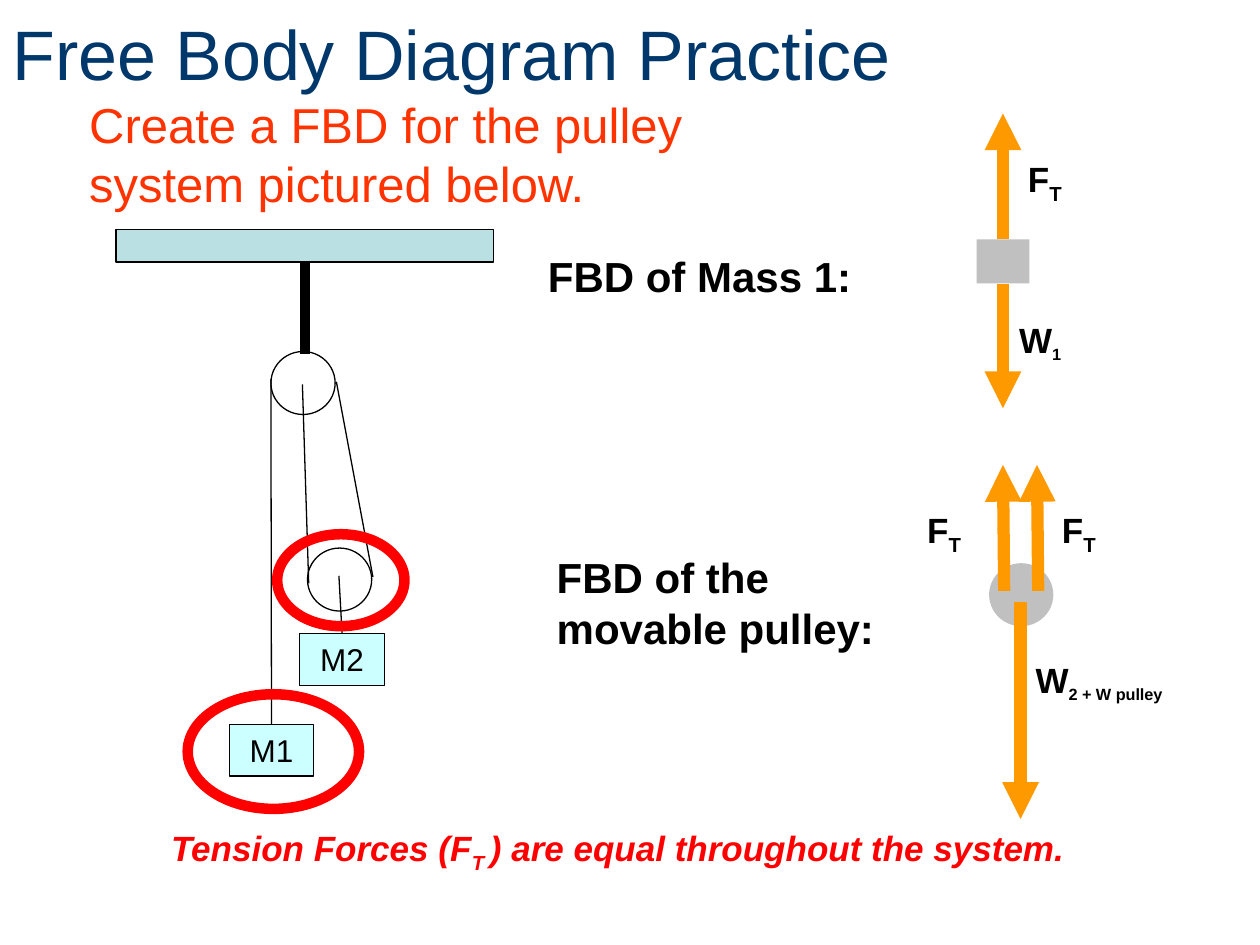
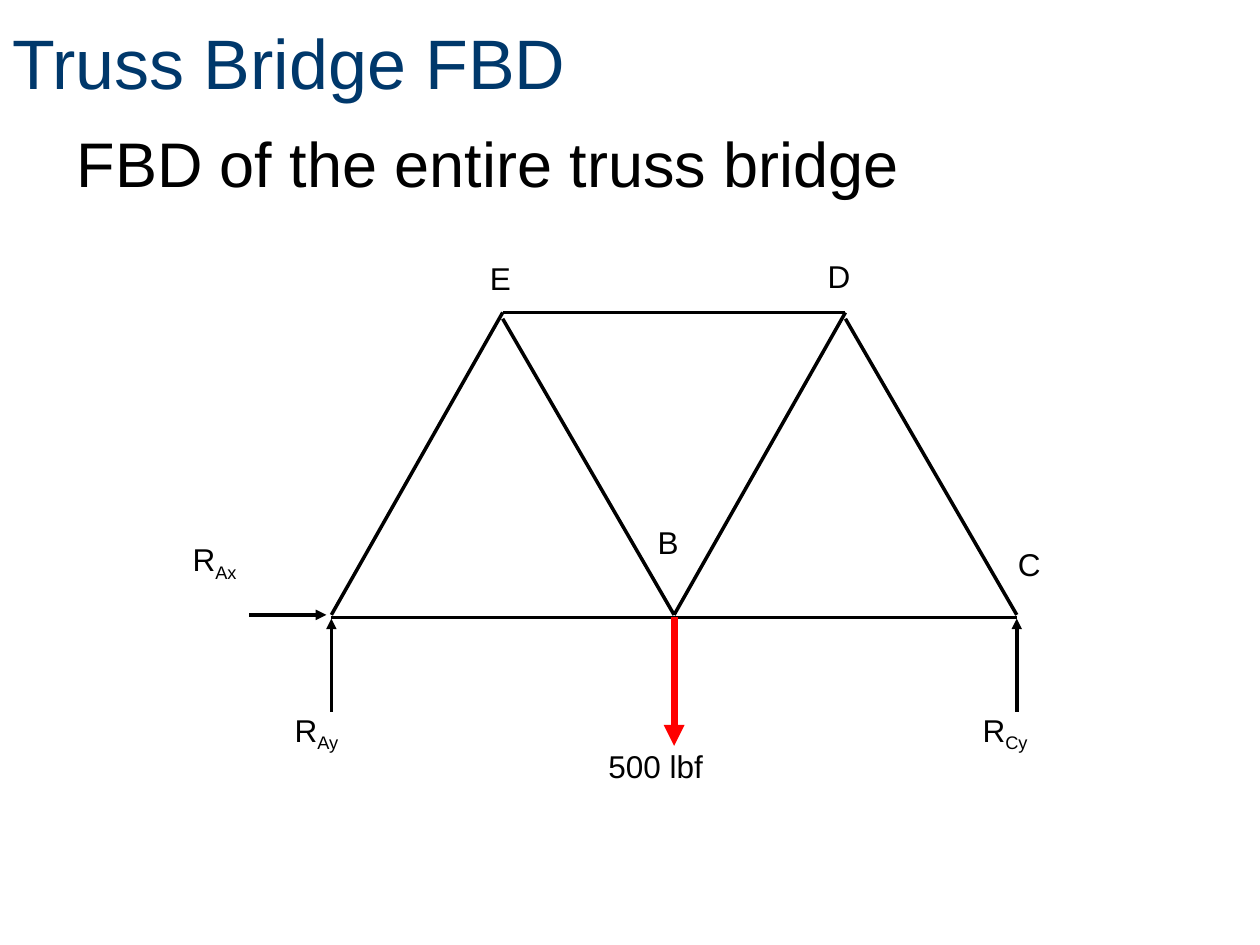
from dataclasses import dataclass

from lxml import etree
from pptx import Presentation
from pptx.dml.color import RGBColor
from pptx.enum import shapes, text
from pptx.oxml import ns
from pptx.util import Inches, Pt


@dataclass(frozen=True)
class Theme:
    font: str = "Arial"
    title: str = "00386B"
    task: str = "FF3300"
    ink: str = "000000"
    alert: str = "FF0000"
    force: str = "FF9900"
    body: str = "C0C0C0"
    ceiling: str = "BBE0E3"
    mass: str = "CCFFFF"
    title_size: int = 40
    lead_size: int = 36
    task_size: int = 28
    heading_size: int = 24
    force_size: int = 20
    weight_sub_size: int = 16
    label_size: int = 18
    hairline: float = 0.75
    member: int = 2
    load: int = 4
    heavy: int = 6
    arrow: int = 7


THEME = Theme()
WIDTH, HEIGHT = 10, 7.5

# ---- Content: pulley slide (text between bars is a subscript) ----
PULLEY_TITLE = "Free Body Diagram Practice"
TASK = ("Create a FBD for the pulley system pictured below.", (0.61, 0.7, 5.89, 1.03))
HEADINGS = [
    ("FBD of Mass 1:", (4.25, 1.94, 2.95, 0.5)),
    ("FBD of the movable pulley:", (4.32, 4.33, 3.15, 0.9)),
]
CONCLUSION = ("Tension Forces (F|T |) are equal throughout the system.", (1.26, 6.51, 8.1, 0.43))
CEILING = (0.92, 1.82, 3, 0.26)
WHEEL_SIZE = (0.51, 0.5)
WHEELS = [(2.15, 2.79), (2.44, 4.35)]
MASS_SIZE = (0.67, 0.41)
MASSES = {"M1": (1.82, 5.75), "M2": (2.38, 5.03)}
MASS_ROPES = {"M1": (2.15, 3.01), "M2": (2.69, 4.57)}
PULLEY_ROPES = [((2.4, 3.05), (2.45, 4.63)), ((2.67, 3.03), (2.96, 4.58))]
RINGS = [(1.49, 5.51, 1.36, 0.91), (2.2, 4.24, 1.01, 0.73)]
FREE_MASS = (7.75, 1.9, 0.42, 0.35)
FREE_PULLEY = (7.85, 4.47)
PULLEY_FORCES = [
    ((8.24, 4.69), (8.23, 3.69)),
    ((7.97, 4.69), (7.96, 3.69)),
    ((8.1, 4.78), (8.1, 6.5)),
]
TENSION_LABELS = [(8.06, 1.2), (8.33, 3.99), (7.26, 3.99)]
WEIGHT_LABELS = [
    ("W|1|", (7.99, 2.48, 0.83, 0.43)),
    ("W|2 + W pulley|", (8.12, 5.18, 1.62, 0.43)),
]

# ---- Content: truss slide; joints as (half panels from A, chord) ----
TRUSS_TITLE = "Truss Bridge FBD"
TRUSS_LEAD = ("FBD of the entire truss bridge", (0.51, 0.94, 6.88, 0.77))
TRUSS_LEFT, HALF_PANEL = 2.63, 1.36
CHORDS = {"top": 2.48, "bottom": 4.9}
JOINTS = {"A": (0, "bottom"), "B": (2, "bottom"), "C": (4, "bottom"),
          "D": (3, "top"), "E": (1, "top")}
# Members with the vertical gap left at each end
MEMBERS = [
    ("A", "B", 0, 0), ("B", "C", 0, 0), ("E", "D", 0, 0),
    ("A", "E", -0.02, 0), ("B", "D", -0.02, 0),
    ("E", "B", 0.05, -0.02), ("D", "C", 0.05, -0.02),
]
# Forces as (joint, offset of tail, offset of tip, colour, width)
TRUSS_FORCES = [
    ("A", (0, 0.75), (0, 0.01), THEME.ink, THEME.member),
    ("A", (-0.65, -0.02), (-0.04, -0.02), THEME.ink, THEME.member),
    ("C", (0, 0.75), (0, 0.01), THEME.ink, THEME.member),
    ("B", (0, 0), (0, 1.02), THEME.alert, THEME.load),
]
TRUSS_LABELS = [
    ("B", (5.12, 4.1, 0.51, 0.55)), ("C", (7.98, 4.28, 0.51, 0.55)),
    ("D", (6.47, 1.99, 0.51, 0.55)), ("E", (3.79, 2.01, 0.51, 0.55)),
    ("500 lbf", (4.73, 5.88, 1.34, 0.55)),
    ("R|Ax|", (1.43, 4.24, 1.04, 0.4)), ("R|Ay|", (2.24, 5.59, 1.04, 0.4)),
    ("R|Cy|", (7.7, 5.59, 1.04, 0.4)),
]


# ---- Drawing helpers ----
def inches(values):
    return [Inches(value) for value in values]


def write(box, words, size, color=THEME.ink, bold=False, italic=False, sub_size=None):
    frame = box.text_frame
    frame.word_wrap = True
    para = frame.paragraphs[0]
    for index, piece in enumerate(words.split("|")):
        if not piece:
            continue
        span = para.add_run()
        span.text = piece
        font = span.font
        font.name, font.bold, font.italic = THEME.font, bold, italic
        font.size = Pt(size)
        font.color.rgb = RGBColor.from_string(color)
        if index % 2:
            font.size = Pt(sub_size or size)
            span._r.get_or_add_rPr().set("baseline", "-25000")
    return para


def add_text(page, words, place, size, **style):
    box = page.shapes.add_textbox(*inches(place))
    write(box, words, size, **style)
    return box


def add_title(page, words, height):
    box = add_text(page, words, (0, 0, 0.93 * WIDTH, height), THEME.title_size, color=THEME.title)
    box.text_frame.vertical_anchor = text.MSO_ANCHOR.MIDDLE


def add_figure(page, kind, place, fill=None, line=None, width=THEME.hairline):
    figure = page.shapes.add_shape(kind, *inches(place))
    figure.shadow.inherit = False
    if fill:
        figure.fill.solid()
        figure.fill.fore_color.rgb = RGBColor.from_string(fill)
    else:
        figure.fill.background()
    if line:
        figure.line.color.rgb = RGBColor.from_string(line)
        figure.line.width = Pt(width)
    else:
        figure.line.fill.background()
    return figure


def add_line(page, start, end, color=THEME.ink, width=THEME.hairline, arrow=False):
    line = page.shapes.add_connector(shapes.MSO_CONNECTOR.STRAIGHT, *inches((*start, *end)))
    line.line.color.rgb = RGBColor.from_string(color)
    line.line.width = Pt(width)
    if arrow:
        outline = line.line._get_or_add_ln()
        etree.SubElement(outline, ns.qn("a:tailEnd"), type="triangle")
    etree.SubElement(line._element.spPr, ns.qn("a:effectLst"))
    return line


# ---- Slides ----
def build_pulley(page):
    oval, rectangle = shapes.MSO_SHAPE.OVAL, shapes.MSO_SHAPE.RECTANGLE
    add_figure(page, oval, FREE_PULLEY + WHEEL_SIZE, fill=THEME.body)
    add_title(page, PULLEY_TITLE, 0.84)

    # Pulley system
    ceiling = add_figure(page, rectangle, CEILING, fill=THEME.ceiling, line=THEME.ink)
    rod = add_line(page, (2.42, 2.08), (2.42, 2.81), width=THEME.heavy)
    rod.begin_connect(ceiling, 2)
    for wheel in WHEELS:
        add_figure(page, oval, wheel + WHEEL_SIZE, line=THEME.ink)
    for start, end in PULLEY_ROPES:
        add_line(page, start, end)
    for name, corner in MASSES.items():
        mass = add_figure(page, rectangle, corner + MASS_SIZE, fill=THEME.mass, line=THEME.ink)
        para = write(mass, name, THEME.label_size)
        para.alignment = text.PP_ALIGN.CENTER
        mass.text_frame.vertical_anchor = text.MSO_ANCHOR.TOP
        rope = add_line(page, MASS_ROPES[name], corner)
        rope.end_connect(mass, 0)

    # Free bodies and their forces
    free_mass = add_figure(page, rectangle, FREE_MASS, fill=THEME.body)
    middle = FREE_MASS[0] + FREE_MASS[2] / 2
    for side, tip in ((0, 0.9), (2, 3.24)):
        force = add_line(page, (middle, FREE_MASS[1]), (middle, tip),
                         THEME.force, THEME.arrow, arrow=True)
        force.begin_connect(free_mass, side)
    for tail, tip in PULLEY_FORCES:
        add_line(page, tail, tip, THEME.force, THEME.arrow, arrow=True)
    for corner in TENSION_LABELS:
        add_text(page, "F|T|", corner + (1.01, 0.43), THEME.force_size, bold=True)
    for words, place in WEIGHT_LABELS:
        add_text(page, words, place, THEME.force_size, bold=True,
                 sub_size=THEME.weight_sub_size)

    # Headings, conclusion and highlights
    for words, place in HEADINGS:
        add_text(page, words, place, THEME.heading_size, bold=True)
    add_text(page, *CONCLUSION, THEME.force_size, color=THEME.alert, bold=True, italic=True)
    for ring in RINGS:
        add_figure(page, oval, ring, line=THEME.alert, width=THEME.heavy)
    add_text(page, *TASK, THEME.task_size, color=THEME.task)


def joint_at(name, shift=(0, 0)):
    column, chord = JOINTS[name]
    return TRUSS_LEFT + column * HALF_PANEL + shift[0], CHORDS[chord] + shift[1]


def build_truss(page):
    add_text(page, *TRUSS_LEAD, THEME.lead_size)
    add_title(page, TRUSS_TITLE, 0.97)
    for words, place in TRUSS_LABELS:
        add_text(page, words, place, THEME.label_size)
    for first, last, first_gap, last_gap in MEMBERS:
        add_line(page, joint_at(first, (0, first_gap)), joint_at(last, (0, last_gap)),
                 width=THEME.member)
    for joint, tail, tip, color, width in TRUSS_FORCES:
        add_line(page, joint_at(joint, tail), joint_at(joint, tip), color, width, arrow=True)


def main():
    deck = Presentation()
    deck.slide_width, deck.slide_height = inches((WIDTH, HEIGHT))
    for build in (build_pulley, build_truss):
        build(deck.slides.add_slide(deck.slide_layouts[6]))
    deck.save("out.pptx")


if __name__ == "__main__":
    main()
